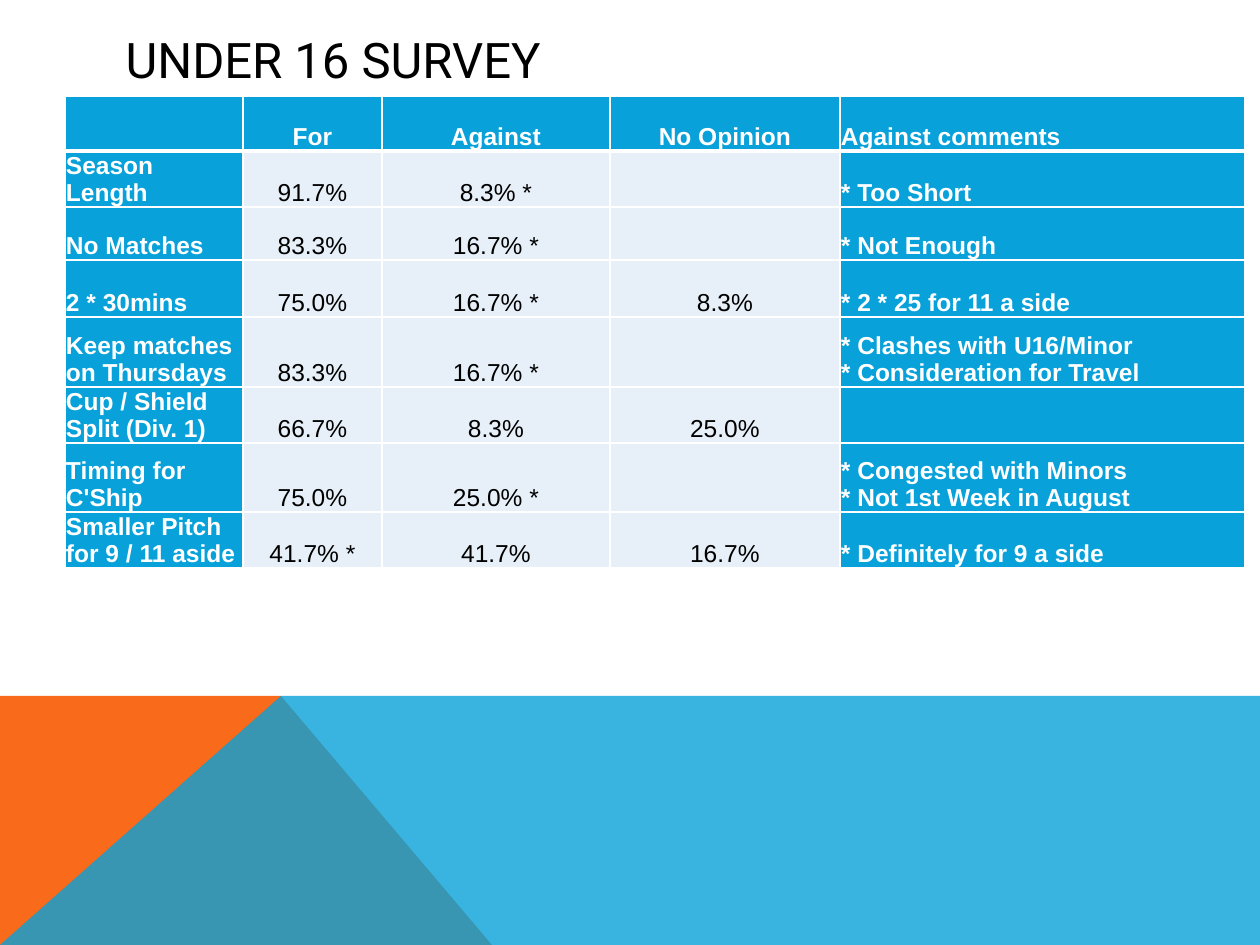
import pptx
import pptx.util
import pptx.dml.color
import pptx.enum.text
import pptx.oxml
import lxml.etree

PX = 914400 // 126  # one px in EMU
COLORS = {"blue": "08A1D9", "orange": "F96A1B", "pale": "E7F0F8",
          "white": "FFFFFF", "black": "000000"}
MIDDLE = pptx.enum.text.MSO_ANCHOR.MIDDLE
BOTTOM = pptx.enum.text.MSO_ANCHOR.BOTTOM
LEFT = pptx.enum.text.PP_ALIGN.LEFT
CENTER = pptx.enum.text.PP_ALIGN.CENTER


def rgb(name):
    return pptx.dml.color.RGBColor.from_string(COLORS[name])


def write(tf, text, size=14, font="Arial", color="black", bold=False, align=LEFT):
    for i, line in enumerate(text.split("\n")):
        p = tf.paragraphs[0] if i == 0 else tf.add_paragraph()
        p.alignment = align
        p.text = line
        p.font.size = pptx.util.Pt(size)
        for r in p.runs:
            r.font.size = pptx.util.Pt(size)
            r.font.name = font
            r.font.bold = bold
            r.font.color.rgb = rgb(color)


prs = pptx.Presentation()
prs.slide_width, prs.slide_height = 1260 * PX, 945 * PX
s = prs.slides.add_slide(prs.slide_layouts[5])

# Footer triangles: the blue one lets the orange show through
bands = [
    ("orange", 100, [(0, 945), (0, 696), (281, 696), (492, 945)]),
    ("blue", 80, [(0, 945), (281, 696), (1260, 696), (1260, 945)]),
]
for color, alpha, points in bands:
    builder = s.shapes.build_freeform(*points[0], scale=PX)
    builder.add_line_segments(points[1:], close=True)
    sp = builder.convert_to_shape()
    sp.shadow.inherit = False
    sp.line.fill.background()
    sp.fill.solid()
    sp.fill.fore_color.rgb = rgb(color)
    if alpha < 100:
        clr = sp.fill._xPr.find(".//" + pptx.oxml.ns.qn("a:srgbClr"))
        lxml.etree.SubElement(clr, pptx.oxml.ns.qn("a:alpha"), val=str(alpha * 1000))

# Title, kept above the table by its closing line break
title = s.shapes.title
title.left, title.top, title.width, title.height = (v * PX for v in (113, 50, 1036, 76))
tf = title.text_frame
tf.word_wrap = True
tf.auto_size = pptx.enum.text.MSO_AUTO_SIZE.NONE
tf.vertical_anchor = MIDDLE
write(tf, "UNDER 16 SURVEY\v", size=28, font="Roboto")
s.shapes._spTree.append(title._element)

# Survey table
rows = [
    ("", "For", "Against", "No Opinion", "Against comments"),
    ("Season Length", "91.7%", "8.3% *", "", "* Too Short"),
    ("No Matches", "83.3%", "16.7% *", "", "* Not Enough"),
    ("2 * 30mins", "75.0%", "16.7% *", "8.3%", "* 2 * 25 for 11 a side"),
    ("Keep matches on Thursdays", "83.3%", "16.7% *", "",
     "* Clashes with U16/Minor\n* Consideration for Travel"),
    ("Cup / Shield Split (Div. 1)", "66.7%", "8.3%", "25.0%", ""),
    ("Timing for C'Ship", "75.0%", "25.0% *", "",
     "* Congested with Minors\n* Not 1st Week in August"),
    ("Smaller Pitch for 9 / 11 aside", "41.7% *", "41.7%", "16.7%",
     "* Definitely for 9 a side"),
]
col_widths = [178, 139, 228, 230, 405]
row_heights = [55, 56, 53, 57, 70, 56, 69, 56]
frame = s.shapes.add_table(len(rows), len(col_widths), 65 * PX, 96 * PX,
                           sum(col_widths) * PX, sum(row_heights) * PX)
table = frame.table
for col, width in zip(table.columns, col_widths):
    col.width = width * PX
for row, height in zip(table.rows, row_heights):
    row.height = height * PX

for i, row in enumerate(rows):
    for j, text in enumerate(row):
        cell = table.cell(i, j)
        strong = i == 0 or j in (0, 4)
        cell.margin_left = cell.margin_right = cell.margin_top = PX
        cell.margin_bottom = 0
        cell.vertical_anchor = BOTTOM
        write(cell.text_frame, text, bold=strong,
              color="white" if strong else "black",
              align=LEFT if j in (0, 4) else CENTER)

        # White borders, heavier under the header; they precede the fill
        tcPr = cell._tc.get_or_add_tcPr()
        for side in ("L", "R", "T", "B"):
            heavy = (i, side) in ((0, "B"), (1, "T"))
            ln = lxml.etree.SubElement(tcPr, pptx.oxml.ns.qn("a:ln" + side),
                                       w=str(pptx.util.Pt(3 if heavy else 1)))
            fill = lxml.etree.SubElement(ln, pptx.oxml.ns.qn("a:solidFill"))
            lxml.etree.SubElement(fill, pptx.oxml.ns.qn("a:srgbClr"), val=COLORS["white"])
        cell.fill.solid()
        cell.fill.fore_color.rgb = rgb("blue" if strong else "pale")

prs.save("out.pptx")
